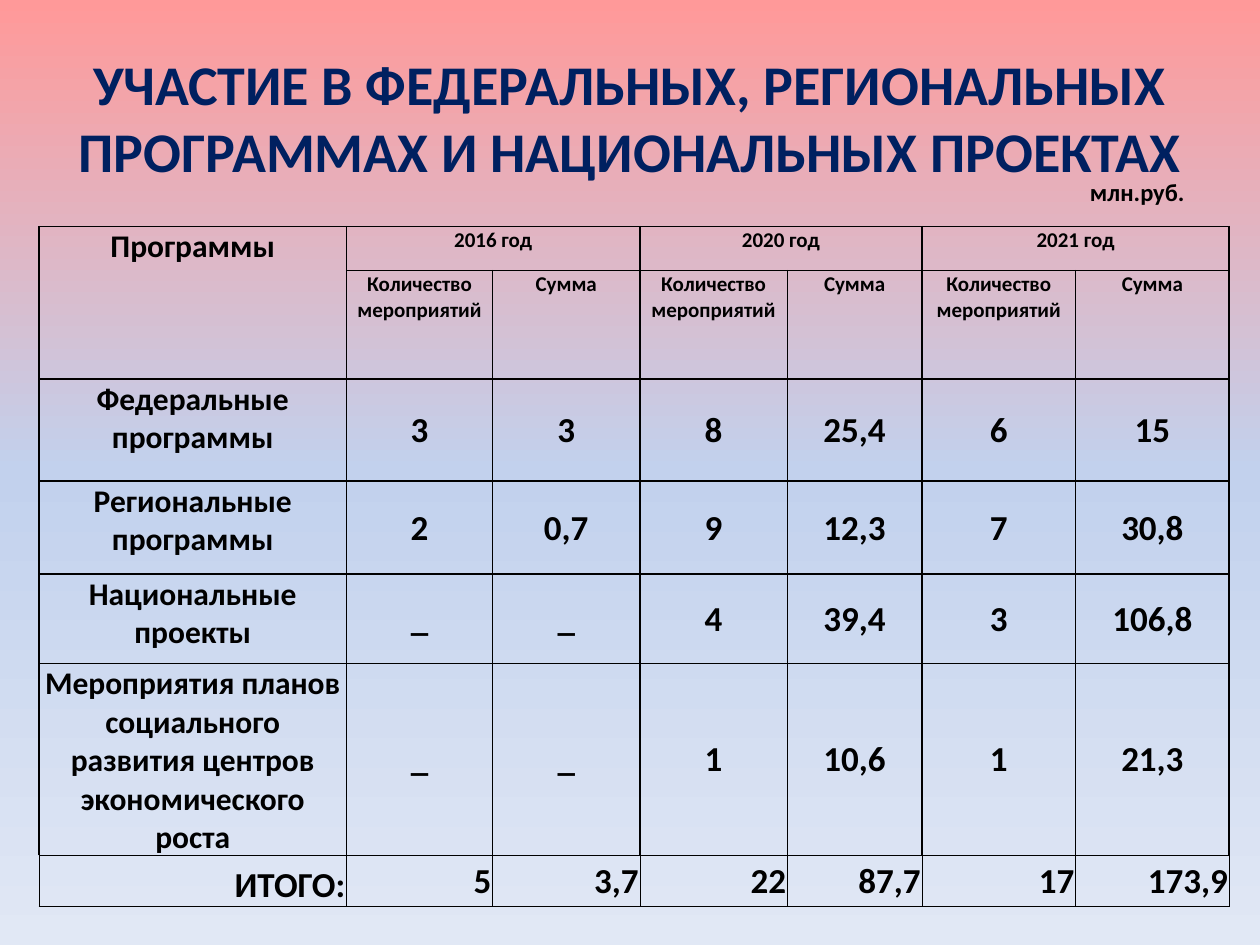
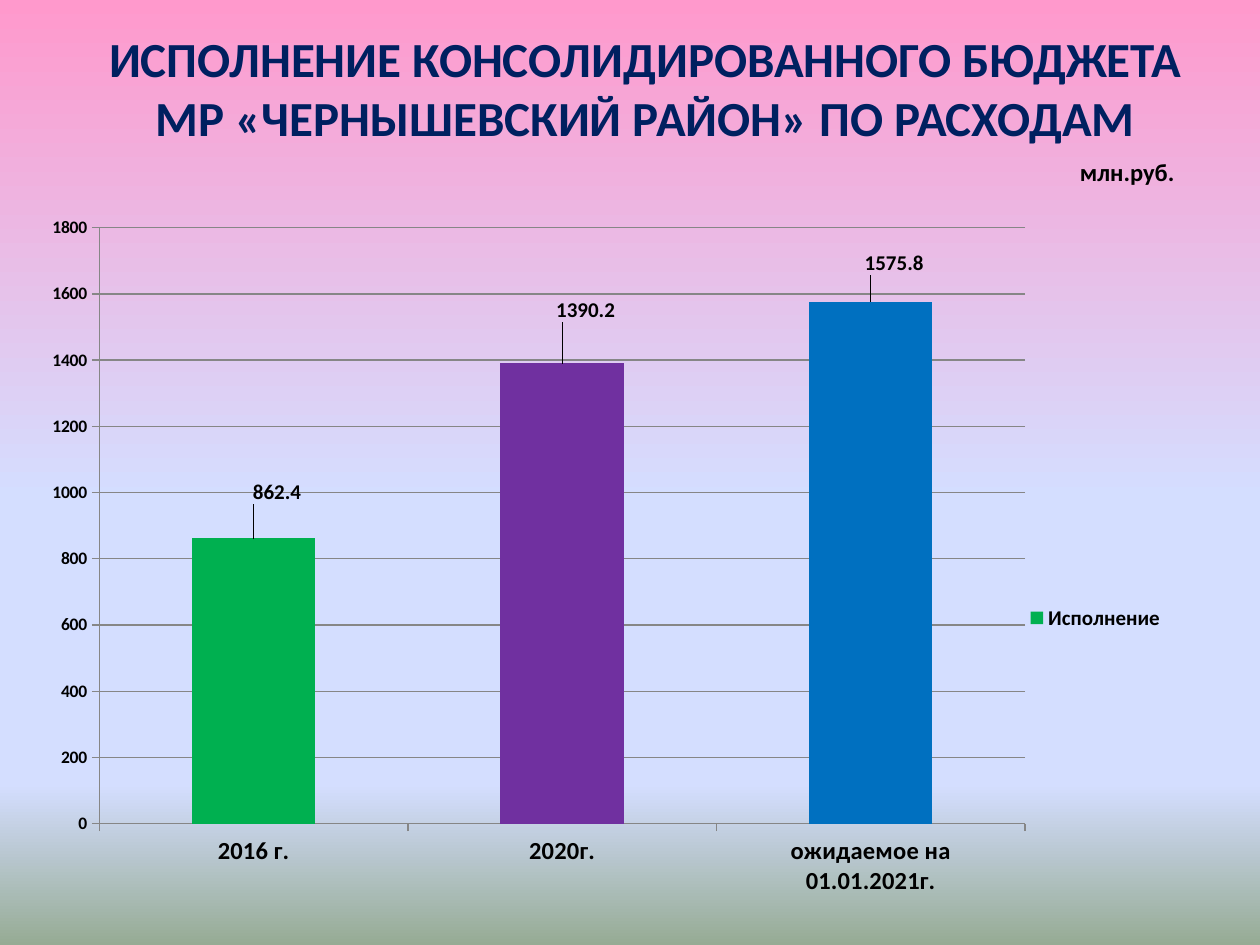
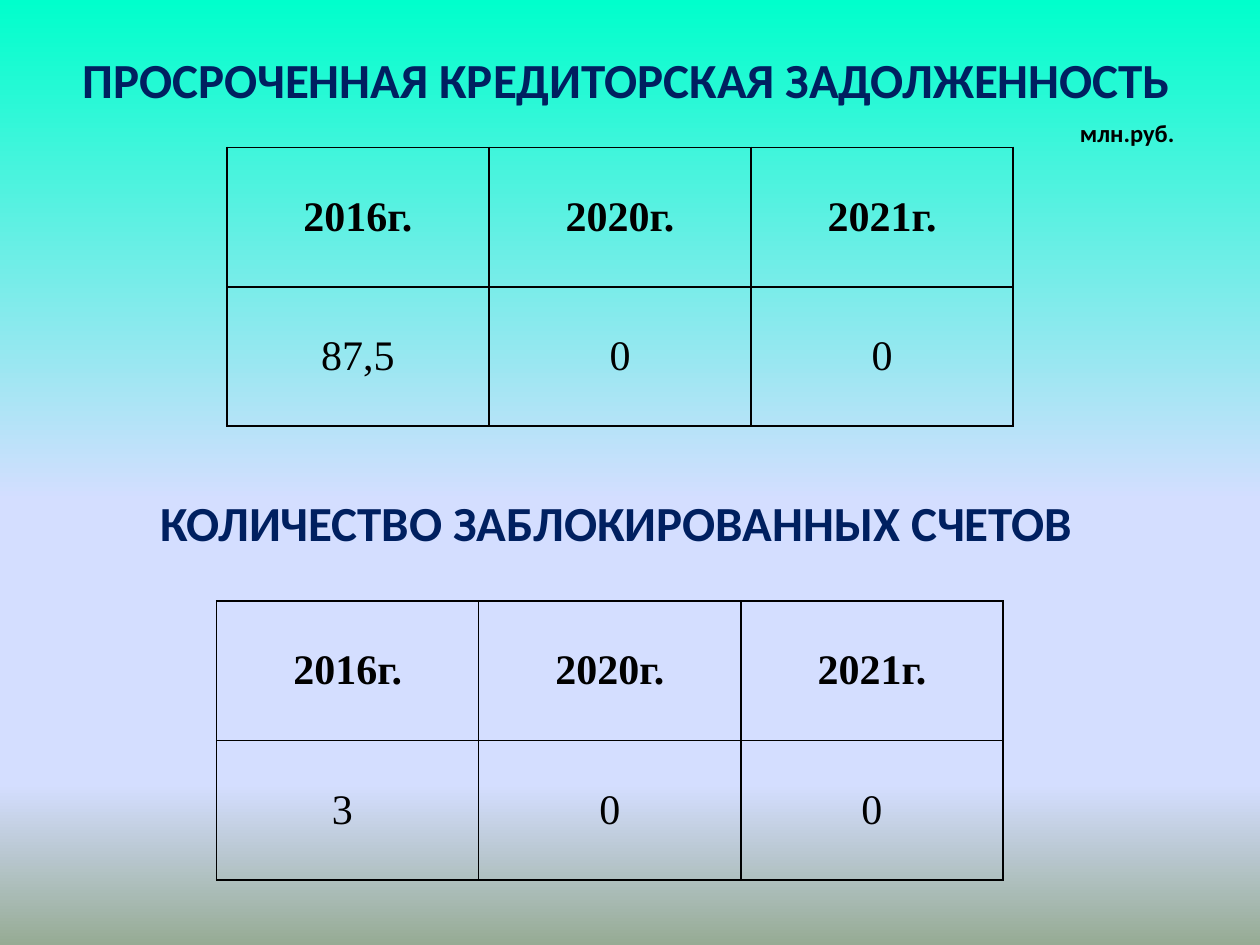
import pptx
import pptx.chart.data
import pptx.dml.color
import pptx.enum.chart
import pptx.enum.text
import pptx.oxml
import pptx.oxml.ns
import pptx.util

Pt = pptx.util.Pt
RGBColor = pptx.dml.color.RGBColor
ALIGN = pptx.enum.text.PP_ALIGN
ANCHOR = pptx.enum.text.MSO_ANCHOR
qn = pptx.oxml.ns.qn

NAVY = RGBColor(0x00, 0x20, 0x60)
BLACK = RGBColor(0x00, 0x00, 0x00)
GRAY = RGBColor(0x86, 0x86, 0x86)
GREEN = RGBColor(0x00, 0xB0, 0x50)
PURPLE = RGBColor(0x70, 0x30, 0xA0)
BLUE = RGBColor(0x00, 0x70, 0xC0)
CORAL = RGBColor(0xFF, 0x99, 0x99)
SKY = RGBColor(0xC2, 0xD1, 0xED)
MIST = RGBColor(0xE1, 0xE8, 0xF5)
PINK = RGBColor(0xFF, 0x99, 0xCC)
AQUA = RGBColor(0x00, 0xFF, 0xCC)
LAVENDER = RGBColor(0xD4, 0xDE, 0xFF)
SAGE = RGBColor(0x96, 0xAB, 0x94)

MEADOW = [(53, LAVENDER), (83, LAVENDER), (100, SAGE)]
BODY_FONT = "Calibri"
SERIF_FONT = "Times New Roman"


def write_text(tf, text, size=14, color=BLACK, bold=True, font=BODY_FONT,
               align=ALIGN.CENTER):
    p = tf.paragraphs[0]
    p.alignment = align
    r = p.add_run()
    r.text = text
    r.font.size = Pt(size)
    r.font.bold = bold
    r.font.name = font
    r.font.color.rgb = color


def add_text(slide, text, left, top, width, height, **fmt):
    sp = slide.shapes.add_textbox(Pt(left), Pt(top), Pt(width), Pt(height))
    tf = sp.text_frame
    tf.word_wrap = True
    tf.vertical_anchor = ANCHOR.MIDDLE
    write_text(tf, text, **fmt)


def add_title(slide, text, left, top, height, size=28):
    add_text(slide, text, left, top, 648, height, size=size, color=NAVY)


def add_unit(slide, left, top):
    add_text(slide, "млн.руб.", left, top, 95.8, 16.6)


def add_slide(prs, stops):
    slide = prs.slides.add_slide(prs.slide_layouts[6])
    slide.background.fill.gradient()
    grad = next(slide.element.iter(qn("a:gradFill")))
    gs_list = "".join(
        f'<a:gs pos="{pos * 1000}"><a:srgbClr val="{color}"/></a:gs>'
        for pos, color in stops)
    ns = pptx.oxml.ns.nsdecls("a")
    for child in list(grad):
        grad.remove(child)
    grad.append(pptx.oxml.parse_xml(f"<a:gsLst {ns}>{gs_list}</a:gsLst>"))
    grad.append(pptx.oxml.parse_xml(f'<a:lin {ns} ang="5400000" scaled="0"/>'))
    return slide


def set_borders(cell, width, bottom):
    tc_pr = cell._tc.get_or_add_tcPr()
    for i, side in enumerate("LRTB"):
        w = Pt(bottom if side == "B" else width)
        tc_pr.insert(i, pptx.oxml.parse_xml(
            f'<a:ln{side} {pptx.oxml.ns.nsdecls("a")} w="{w}"><a:solidFill>'
            f'<a:srgbClr val="{BLACK}"/></a:solidFill></a:ln{side}>'))


def fill_cell(cell, text, anchor=ANCHOR.MIDDLE, **fmt):
    cell.vertical_anchor = anchor
    write_text(cell.text_frame, text, **fmt)


def add_grid(slide, left, top, cols, rows, margins, thin_last=False):
    table = slide.shapes.add_table(len(rows), len(cols), Pt(left), Pt(top),
                                   Pt(sum(cols)), Pt(sum(rows))).table
    table.first_row = table.horz_banding = False
    for col, width in zip(table.columns, cols):
        col.width = Pt(width)
    last = len(rows) - 1
    for i, height in enumerate(rows):
        table.rows[i].height = Pt(height)
        for cell in table.rows[i].cells:
            cell.fill.background()
            (cell.margin_left, cell.margin_top,
             cell.margin_right, cell.margin_bottom) = map(Pt, margins)
            set_borders(cell, 0.5 if thin_last and i == last else 1,
                        0.5 if thin_last and i >= last - 1 else 1)
    return table


def add_programs_table(slide):
    cols = [175.7, 83.5, 84.2, 84.2, 77, 87.8, 87.8]
    rows = [25.2, 61.9, 58.3, 53.3, 51.1, 109.4, 29.5]
    programs = [
        ("Федеральные программы", "3", "3", "8", "25,4", "6", "15"),
        ("Региональные программы", "2", "0,7", "9", "12,3", "7", "30,8"),
        ("Национальные проекты", "_", "_", "4", "39,4", "3", "106,8"),
        ("Мероприятия планов социального развития центров экономического роста",
         "_", "_", "1", "10,6", "1", "21,3"),
    ]
    totals = ("ИТОГО:", "5", "3,7", "22", "87,7", "17", "173,9")
    table = add_grid(slide, 22.3, 129.5, cols, rows, (0.7, 0.7, 0.7, 0),
                     thin_last=True)

    table.cell(0, 0).merge(table.cell(1, 0))
    fill_cell(table.cell(0, 0), "Программы", ANCHOR.TOP, size=18)
    for col, year in zip((1, 3, 5), ("2016", "2020", "2021")):
        table.cell(0, col).merge(table.cell(0, col + 1))
        fill_cell(table.cell(0, col), f"{year} год", ANCHOR.TOP, size=12)
        for i, text in enumerate(("Количество мероприятий", "Сумма")):
            fill_cell(table.cell(1, col + i), text, ANCHOR.TOP, size=12)

    for i, (program, *values) in enumerate(programs, 2):
        fill_cell(table.cell(i, 0), program, ANCHOR.TOP, size=18)
        for col, value in enumerate(values, 1):
            fill_cell(table.cell(i, col), value, size=20)
    for col, text in enumerate(totals):
        fill_cell(table.cell(6, col), text,
                  ANCHOR.MIDDLE if col else ANCHOR.BOTTOM,
                  size=20, align=ALIGN.RIGHT)


def add_years_table(slide, left, top, values):
    table = add_grid(slide, left, top, [149.8] * 3, [79.7] * 2, (5, 0, 5, 0))
    for col, (year, value) in enumerate(zip(("2016", "2020", "2021"), values)):
        fill_cell(table.cell(0, col), f"{year}г.", size=24, font=SERIF_FONT)
        fill_cell(table.cell(1, col), value, size=24, font=SERIF_FONT, bold=False)


def set_layout(parent, index, target=None, edge=True, **fractions):
    for old in parent.findall(qn("c:layout")):
        parent.remove(old)
    tags = f'<c:layoutTarget val="{target}"/>' if target else ""
    if edge:
        tags += '<c:xMode val="edge"/><c:yMode val="edge"/>'
    tags += "".join(f'<c:{k} val="{v}"/>' for k, v in fractions.items())
    parent.insert(index, pptx.oxml.parse_xml(
        f'<c:layout {pptx.oxml.ns.nsdecls("c")}><c:manualLayout>{tags}'
        '</c:manualLayout></c:layout>'))


def set_font(font, size):
    font.size = Pt(size)
    font.bold = True
    font.name = BODY_FONT
    font.color.rgb = BLACK


def add_spending_chart(slide):
    data = pptx.chart.data.CategoryChartData()
    data.categories = ["2016 г.", "2020г.", "ожидаемое на 01.01.2021г."]
    data.add_series("Исполнение", [862.4, 1390.2, 1575.8])
    chart = slide.shapes.add_chart(
        pptx.enum.chart.XL_CHART_TYPE.COLUMN_CLUSTERED,
        Pt(16.6), Pt(118), Pt(669.6), Pt(405.4), data).chart
    chart.has_title = False
    set_font(chart.font, 10)

    for axis, size in ((chart.category_axis, 14), (chart.value_axis, 10)):
        set_font(axis.tick_labels.font, size)
        axis.major_tick_mark = pptx.enum.chart.XL_TICK_MARK.OUTSIDE
        axis.format.line.color.rgb = GRAY
    axis = chart.value_axis
    axis.minimum_scale, axis.maximum_scale, axis.major_unit = 0, 1800, 200
    axis.has_major_gridlines = True
    axis.major_gridlines.format.line.color.rgb = GRAY

    chart.has_legend = True
    legend = chart.legend
    legend.position = pptx.enum.chart.XL_LEGEND_POSITION.RIGHT
    legend.include_in_layout = False
    set_font(legend.font, 12)
    set_layout(legend._element, 1, x=0.84, y=0.55, w=0.14, h=0.06)
    set_layout(chart._chartSpace.chart.plotArea, 0, "inner",
               x=0.06, y=0.03, w=0.79, h=0.84)

    plot = chart.plots[0]
    plot.gap_width = 150
    plot.vary_by_categories = False
    series = plot.series[0]
    series.format.fill.solid()
    series.format.fill.fore_color.rgb = GREEN
    for i, color in ((1, PURPLE), (2, BLUE)):
        fill = series.points[i].format.fill
        fill.solid()
        fill.fore_color.rgb = color
    for i in range(3):
        label = series.points[i].data_label
        set_font(label.font, 12)
        label.position = pptx.enum.chart.XL_LABEL_POSITION.OUTSIDE_END
    shifts = [(0.02, -0.04), (0.02, -0.05), (0.02, -0.03)]
    for d_lbl, (x, y) in zip(series._element.iter(qn("c:dLbl")), shifts):
        set_layout(d_lbl, 1, edge=False, x=x, y=y)


def main():
    prs = pptx.Presentation()
    prs.slide_width, prs.slide_height = Pt(720), Pt(540)

    slide = add_slide(prs, [(0, CORAL), (50, SKY), (100, MIST)])
    add_title(slide, "УЧАСТИЕ В ФЕДЕРАЛЬНЫХ, РЕГИОНАЛЬНЫХ ПРОГРАММАХ "
              "И НАЦИОНАЛЬНЫХ ПРОЕКТАХ", 36, 21.6, 90, size=32)
    add_programs_table(slide)
    add_unit(slide, 602, 101.5)

    slide = add_slide(prs, [(0, PINK)] + MEADOW)
    add_title(slide, "ИСПОЛНЕНИЕ КОНСОЛИДИРОВАННОГО БЮДЖЕТА "
              "МР «ЧЕРНЫШЕВСКИЙ РАЙОН» ПО РАСХОДАМ", 44.6, 16.6, 67)
    add_unit(slide, 596.2, 90)
    add_spending_chart(slide)

    slide = add_slide(prs, [(0, AQUA)] + MEADOW)
    add_title(slide, "ПРОСРОЧЕННАЯ КРЕДИТОРСКАЯ ЗАДОЛЖЕННОСТЬ", 33.8, 0, 90)
    add_years_table(slide, 129.6, 84.2, ("87,5", "0", "0"))
    add_title(slide, "КОЛИЧЕСТВО ЗАБЛОКИРОВАННЫХ СЧЕТОВ", 28.1, 253.4, 90)
    add_years_table(slide, 123.8, 343.4, ("3 ", "0", "0"))
    add_unit(slide, 596.2, 67.7)

    prs.save("out.pptx")


if __name__ == "__main__":
    main()
